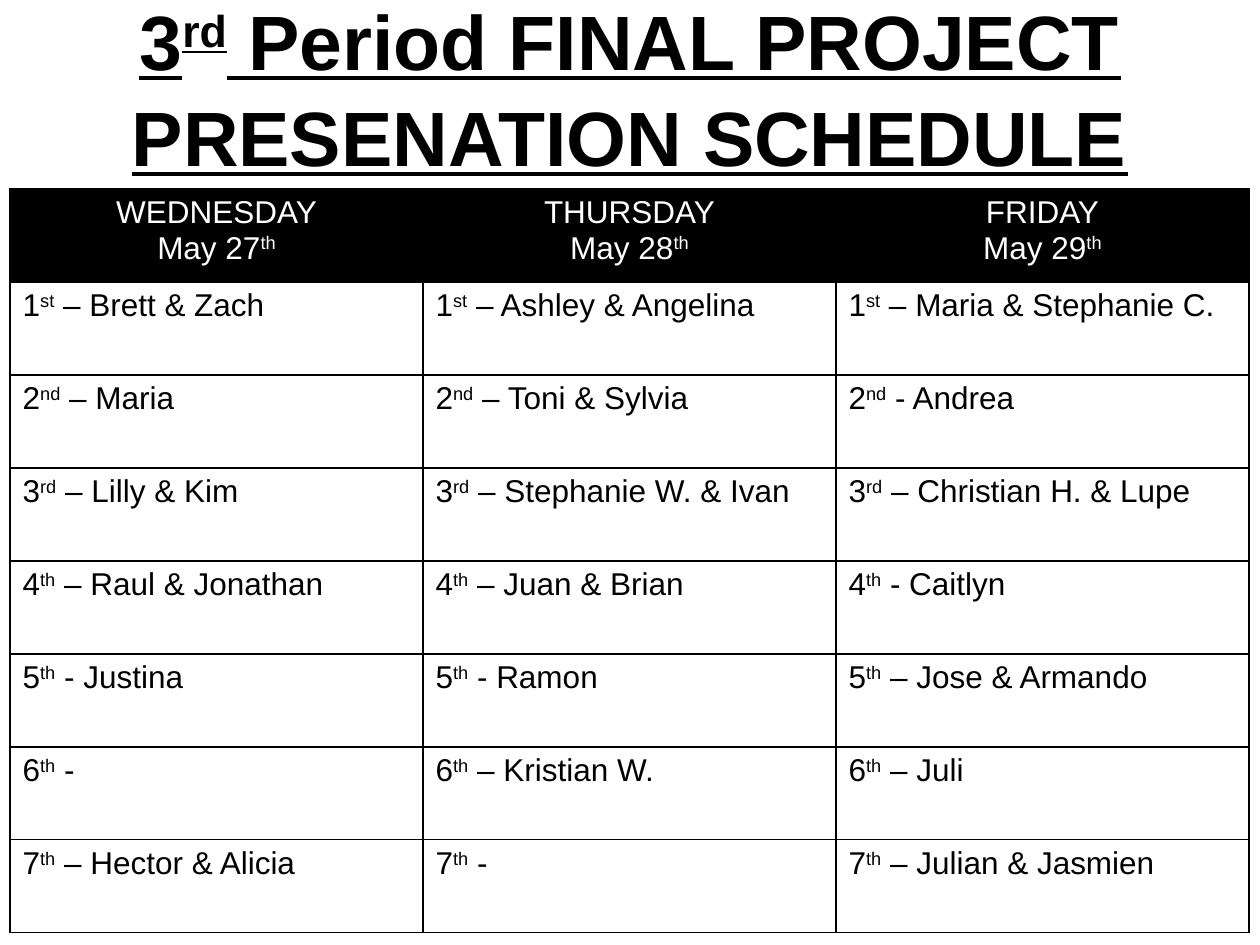
from dataclasses import dataclass

import pptx
import pptx.dml.color
import pptx.enum.text
import pptx.oxml
import pptx.oxml.ns
import pptx.util

EMU_PER_PX = 914400 // 126
FONT = "Arial"
BLACK, WHITE = "000000", "FFFFFF"
CENTER = pptx.enum.text.PP_ALIGN.CENTER
COLUMN_WIDTH, ROW_HEIGHT = 413, 93


@dataclass
class Day:
    weekday: str
    date: int
    presenters: list[str]


DAYS = [
    Day("WEDNESDAY", 27, ["– Brett & Zach", "– Maria", "– Lilly & Kim", "– Raul & Jonathan",
                          "- Justina", "-", "– Hector & Alicia"]),
    Day("THURSDAY", 28, ["– Ashley & Angelina", "– Toni & Sylvia", "– Stephanie W. & Ivan",
                         "– Juan & Brian", "- Ramon", "– Kristian W.", "-"]),
    Day("FRIDAY", 29, ["– Maria & Stephanie C.", "- Andrea", "– Christian H. & Lupe",
                       "- Caitlyn", "– Jose & Armando", "– Juli", "– Julian & Jasmien"]),
]


def px(length: int) -> int:
    return pptx.util.Emu(length * EMU_PER_PX)


def rgb(color: str) -> pptx.dml.color.RGBColor:
    return pptx.dml.color.RGBColor.from_string(color)


def ordinal_suffix(number: int) -> str:
    return {1: "st", 2: "nd", 3: "rd"}.get(number, "th")


def write(paragraph, size: int, color: str, text: str, suffix: str = "", rest: str = "",
          bold: bool = False, align=None) -> None:
    """Write text, a raised suffix and the rest in one paragraph."""
    for part in filter(None, (text, suffix, rest)):
        run = paragraph.add_run()
        run.text = part
        if part == suffix:
            run._r.get_or_add_rPr().set("baseline", "30000")
    paragraph.alignment = align
    font = paragraph.font
    font.name, font.size, font.bold = FONT, pptx.util.Pt(size), bold
    font.underline = bold
    font.color.rgb = rgb(color)


def add_borders(cell, color: str) -> None:
    properties = cell._tc.get_or_add_tcPr()
    for index, side in enumerate(("lnL", "lnR", "lnT", "lnB")):
        properties.insert(index, pptx.oxml.parse_xml(
            f'<a:{side} {pptx.oxml.ns.nsdecls("a")} w="12700"><a:solidFill>'
            f'<a:srgbClr val="{color}"/></a:solidFill></a:{side}>'))


def add_title(slide) -> None:
    frame = slide.shapes.add_textbox(px(0), px(38), px(1260), px(88)).text_frame
    frame.word_wrap = True
    frame.vertical_anchor = pptx.enum.text.MSO_ANCHOR.MIDDLE
    frame.margin_top = px(17)
    write(frame.paragraphs[0], 44, BLACK, "3", "rd", " Period FINAL PROJECT", True, CENTER)
    second_line = frame.add_paragraph()
    second_line.space_before = pptx.util.Pt(2)
    write(second_line, 44, BLACK, "PRESENATION SCHEDULE", bold=True, align=CENTER)


def add_schedule(slide, days: list[Day]) -> None:
    row_count = 1 + len(days[0].presenters)
    table = slide.shapes.add_table(
        row_count, len(days), px(10), px(189),
        px(COLUMN_WIDTH * len(days)), px(ROW_HEIGHT * row_count)).table
    table.horz_banding = False
    for column in table.columns:
        column.width = px(COLUMN_WIDTH)
    for row in table.rows:
        row.height = px(ROW_HEIGHT)

    for column_index, day in enumerate(days):
        # Day heading
        heading = table.cell(0, column_index)
        heading.fill.solid()
        heading.fill.fore_color.rgb = rgb(BLACK)
        add_borders(heading, BLACK)
        frame = heading.text_frame
        write(frame.paragraphs[0], 18, WHITE, day.weekday, align=CENTER)
        write(frame.add_paragraph(), 18, WHITE, f"May {day.date}", "th", align=CENTER)

        # Numbered presentations
        for turn, presenter in enumerate(day.presenters, start=1):
            cell = table.cell(turn, column_index)
            cell.fill.background()
            add_borders(cell, BLACK)
            write(cell.text_frame.paragraphs[0], 18, BLACK,
                  str(turn), ordinal_suffix(turn), f" {presenter}")


def main() -> None:
    presentation = pptx.Presentation()
    presentation.slide_width, presentation.slide_height = px(1260), px(945)
    slide = presentation.slides.add_slide(presentation.slide_layouts[6])
    add_title(slide)
    add_schedule(slide, DAYS)
    presentation.save("out.pptx")


if __name__ == "__main__":
    main()
